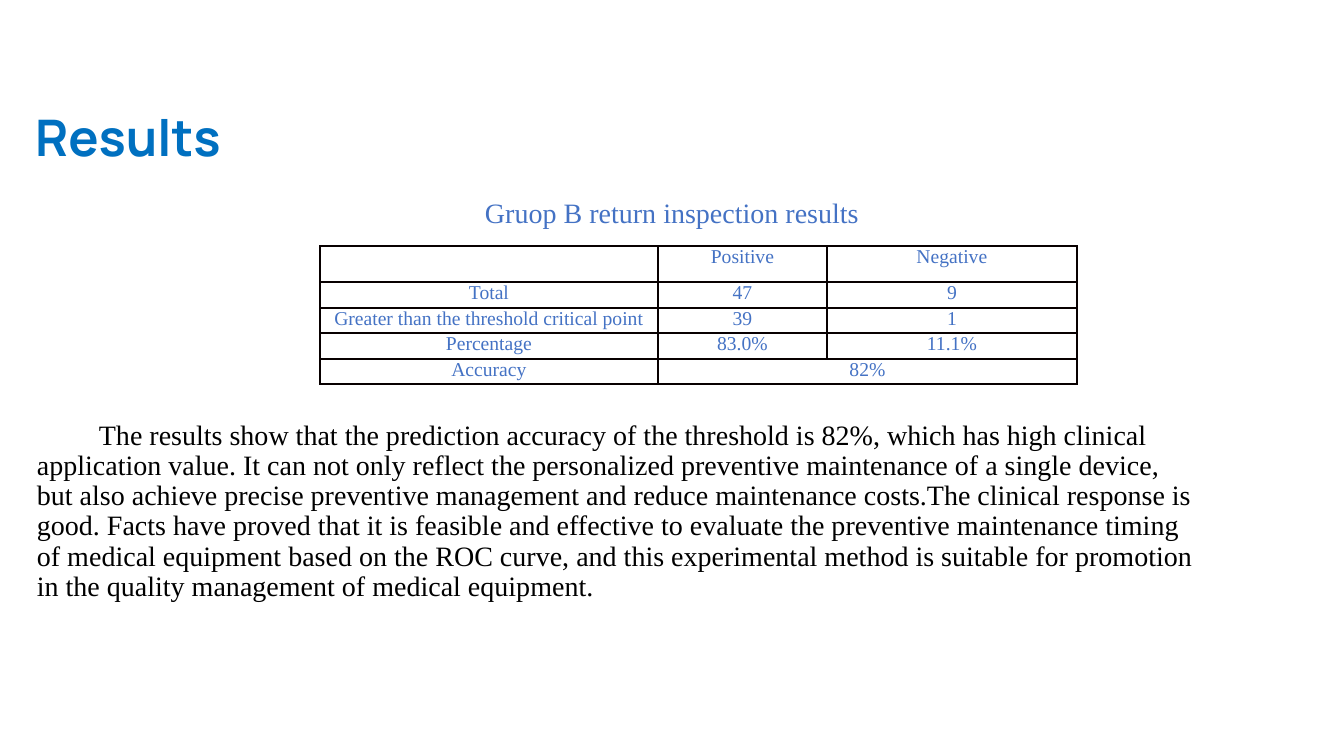
from lxml.etree import SubElement
from pptx import Presentation
from pptx.dml.color import RGBColor
from pptx.enum.text import MSO_ANCHOR, MSO_AUTO_SIZE, PP_ALIGN
from pptx.oxml.ns import qn
from pptx.util import Emu, Pt

TITLE_BLUE = RGBColor(0x00, 0x70, 0xC0)
TABLE_BLUE = RGBColor(0x44, 0x72, 0xC4)
BLACK = RGBColor(0x00, 0x00, 0x00)
BORDER = RGBColor(0x08, 0x00, 0x00)
HEADING_FONT = "Manrope"
BODY_FONT = "Times New Roman"

COLUMN_WIDTHS = (338, 169, 250)
ROW_HEIGHTS = (36, 26, 25, 26, 25)
RESULT_ROWS = (
    ("", "Positive", "Negative"),
    ("Total", "47", "9"),
    ("Greater than the threshold critical point", "39", "1"),
    ("Percentage", "83.0%", "11.1%"),
    ("Accuracy", "82%", ""),
)
CONCLUSION = (
    "The results show that the prediction accuracy of the threshold is 82%, which has high "
    "clinical application value. It can not only reflect the personalized preventive "
    "maintenance of a single device, but also achieve precise preventive management and "
    "reduce maintenance costs.The clinical response is good. Facts have proved that it is "
    "feasible and effective to evaluate the preventive maintenance timing of medical "
    "equipment based on the ROC curve, and this experimental method is suitable for "
    "promotion in the quality management of medical equipment."
)


def px(length):
    """Turn pixels (100.8 to the inch) into EMU."""
    return Emu(round(length * 914400 / 100.8))


def format_paragraph(paragraph, font_name, size, color, align, bold=False):
    paragraph.alignment = align
    for run in paragraph.runs:
        run.font.name = font_name
        run.font.size = Pt(size)
        run.font.bold = bold
        run.font.color.rgb = color


def add_title(slide, text, left, top, width, height):
    title = slide.shapes.title
    title.left, title.top = px(left), px(top)
    title.width, title.height = px(width), px(height)
    text_frame = title.text_frame
    text_frame.text = text
    text_frame.auto_size = MSO_AUTO_SIZE.NONE
    text_frame.vertical_anchor = MSO_ANCHOR.TOP
    paragraph = text_frame.paragraphs[0]
    paragraph.line_spacing = 0.9
    format_paragraph(paragraph, HEADING_FONT, 36, TITLE_BLUE, PP_ALIGN.LEFT, bold=True)


def add_text(slide, text, left, top, width, height, color, align, indent=0):
    text_box = slide.shapes.add_textbox(px(left), px(top), px(width), px(height))
    text_frame = text_box.text_frame
    text_frame.word_wrap = True
    text_frame.text = text
    paragraph = text_frame.paragraphs[0]
    paragraph.line_spacing = 0.9
    format_paragraph(paragraph, BODY_FONT, 20, color, align)
    if indent:
        paragraph._p.get_or_add_pPr().set("indent", str(px(indent)))


def set_borders(cell):
    properties = cell._tc.get_or_add_tcPr()
    for position, side in enumerate(("a:lnL", "a:lnR", "a:lnT", "a:lnB")):
        line = SubElement(properties, qn(side), w=str(Pt(1)))
        fill = SubElement(line, qn("a:solidFill"))
        SubElement(fill, qn("a:srgbClr"), val=str(BORDER))
        # Borders must come before the cell fill
        properties.insert(position, line)


def add_results_table(slide, left, top):
    frame = slide.shapes.add_table(
        len(ROW_HEIGHTS), len(COLUMN_WIDTHS), px(left), px(top),
        px(sum(COLUMN_WIDTHS)), px(sum(ROW_HEIGHTS)))
    table = frame.table
    table.first_row = table.horz_banding = False
    for column, width in zip(table.columns, COLUMN_WIDTHS):
        column.width = px(width)
    for row, height, values in zip(table.rows, ROW_HEIGHTS, RESULT_ROWS):
        row.height = px(height)
        for cell, value in zip(row.cells, values):
            cell.text = value
            cell.margin_left = cell.margin_right = px(7)
            cell.margin_top = cell.margin_bottom = 0
            cell.fill.background()
            set_borders(cell)
            format_paragraph(cell.text_frame.paragraphs[0], BODY_FONT, 14,
                             TABLE_BLUE, PP_ALIGN.CENTER)
    # Accuracy covers both result columns
    table.cell(4, 1).merge(table.cell(4, 2))


def main():
    presentation = Presentation()
    presentation.slide_width, presentation.slide_height = px(1344), px(756)
    slide = presentation.slides.add_slide(presentation.slide_layouts[5])

    # Heading
    add_title(slide, "Results", 25, 108, 1115, 101)

    # Table with its caption
    add_text(slide, "Gruop B return inspection results", 442, 194, 460, 42,
             TABLE_BLUE, PP_ALIGN.CENTER)
    add_results_table(slide, 320, 246)

    # Conclusion
    add_text(slide, CONCLUSION, 27, 416, 1179, 192, BLACK, PP_ALIGN.LEFT, indent=62)

    presentation.save("out.pptx")


if __name__ == "__main__":
    main()
